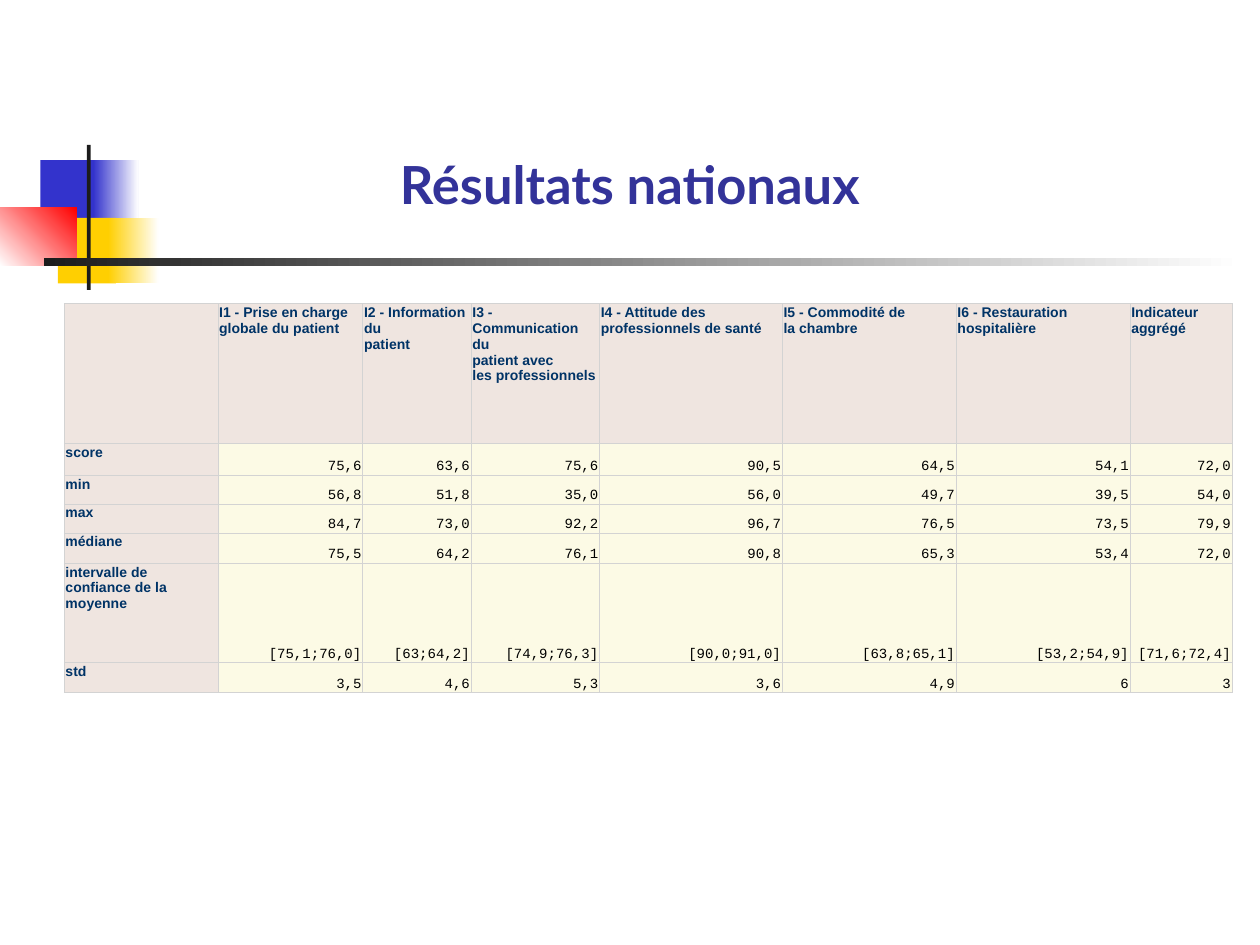
"""Build the slide of national results: a title, corner blocks and a table of scores."""
from copy import deepcopy

from lxml import etree
from pptx import Presentation
from pptx import util as u
from pptx.dml import color
from pptx.enum import shapes, text
from pptx.oxml import ns

HUES = {
    "blue": "3333CC", "gold": "FFCF01", "red": "FF0000", "dark": "1C1C1C",
    "white": "FFFFFF", "title": "333399", "head": "EFE5E0", "body": "FCFAE5",
    "navy": "003366", "black": "000000", "edge": "D3D3D3",
}


def hue(name):
    """Return the named colour."""
    return color.RGBColor.from_string(HUES[name])


def style(para, tint, form):
    """Format the runs and line breaks of a paragraph."""
    for run in para.runs:
        for key, val in form.items():
            setattr(run.font, key, val)
        run.font.color.rgb = hue(tint)
    for gap in para._p.findall(ns.qn("a:br")):
        gap.append(deepcopy(para.runs[0].font._element))


deck = Presentation()
deck.slide_width, deck.slide_height = u.Inches(10), u.Inches(7.5)
slide = deck.slides.add_slide(deck.slide_layouts[0])
sub = slide.placeholders[1]._element
sub.getparent().remove(sub)

blocks = [
    (0.32, 1.27, 0.48, 0.52, ["blue"], 0),
    (0.74, 1.27, 0.36, 0.52, ["blue", "white"], 0),
    (0.46, 1.73, 0.46, 0.52, ["gold"], 0),
    (0.86, 1.73, 0.4, 0.52, ["gold", "white"], 0),
    (0, 1.65, 0.61, 0.46, ["white", "red"], 45),
    (0.69, 1.15, 0.03, 1.15, ["dark"], 0),
    (0.35, 2.05, 9.51, 0.06, ["dark", "white"], 0),
]
group = slide.shapes.add_group_shape()
for *box, tints, angle in blocks:
    block = group.shapes.add_shape(shapes.MSO_SHAPE.RECTANGLE, *map(u.Inches, box))
    block.shadow.inherit = False
    block.line.fill.background()
    if len(tints) == 1:
        block.fill.solid()
        block.fill.fore_color.rgb = hue(tints[0])
    else:
        block.fill.gradient()
        block.fill.gradient_angle = angle
        for stop, tint in zip(block.fill.gradient_stops, tints):
            stop.color.rgb = hue(tint)

title = slide.shapes.title
place = {"left": 0.75, "top": 0.44, "width": 8.5, "height": 1.6}
for key, val in place.items():
    setattr(title, key, u.Inches(val))
frame = title.text_frame
frame.text = "Résultats nationaux"
form = {
    "vertical_anchor": text.MSO_ANCHOR.BOTTOM, "margin_bottom": u.Inches(0.33),
    "auto_size": text.MSO_AUTO_SIZE.NONE, "word_wrap": True,
}
for key, val in form.items():
    setattr(frame, key, val)
para = frame.paragraphs[0]
para.alignment = text.PP_ALIGN.CENTER
style(para, "title", {"name": "Lato", "size": u.Pt(30), "bold": True})
slide.shapes._spTree.append(title._element)

rows = [
    ["", "I1 - Prise en charge\vglobale du patient", "I2 - Information du\vpatient",
     "I3 - Communication du\vpatient avec\vles professionnels",
     "I4 - Attitude des\vprofessionnels de santé", "I5 - Commodité de\vla chambre",
     "I6 - Restauration\vhospitalière", "Indicateur\vaggrégé"],
    ["score", "75,6", "63,6", "75,6", "90,5", "64,5", "54,1", "72,0"],
    ["min", "56,8", "51,8", "35,0", "56,0", "49,7", "39,5", "54,0"],
    ["max", "84,7", "73,0", "92,2", "96,7", "76,5", "73,5", "79,9"],
    ["médiane", "75,5", "64,2", "76,1", "90,8", "65,3", "53,4", "72,0"],
    ["intervalle de confiance de la moyenne", "[75,1;76,0]", "[63;64,2]", "[74,9;76,3]",
     "[90,0;91,0]", "[63,8;65,1]", "[53,2;54,9]", "[71,6;72,4]"],
    ["std", "3,5", "4,6", "5,3", "3,6", "4,9", "6", "3"],
]
wides = [1.22, 1.15, 0.86, 1.02, 1.45, 1.38, 1.38, 0.81]
highs = [1.11, 0.25, 0.23, 0.23, 0.24, 0.79, 0.24]
area = map(u.Inches, (0.51, 2.41, 9.29, 3.07))
table = slide.shapes.add_table(len(rows), len(wides), *area).table
table.first_row = table.horz_banding = False
for col, wide in zip(table.columns, wides):
    col.width = u.Inches(wide)
for row, high in zip(table.rows, highs):
    row.height = u.Inches(high)

label = {
    "fill": "head", "tint": "navy", "anchor": text.MSO_ANCHOR.TOP,
    "align": text.PP_ALIGN.LEFT,
    "font": {"name": "Arial", "size": u.Pt(8), "bold": True},
}
score = {
    "fill": "body", "tint": "black", "anchor": text.MSO_ANCHOR.BOTTOM,
    "align": text.PP_ALIGN.RIGHT,
    "font": {"name": "Courier New", "size": u.Pt(8), "bold": False},
}
pads = {"margin_left": 0.01, "margin_right": 0.01, "margin_top": 0.01, "margin_bottom": 0}
for r, row in enumerate(rows):
    for c, word in enumerate(row):
        look = score if r and c else label
        cell = table.cell(r, c)
        cell.text_frame.text = word
        for key, val in pads.items():
            setattr(cell, key, u.Inches(val))
        cell.vertical_anchor = look["anchor"]
        para = cell.text_frame.paragraphs[0]
        para.alignment = look["align"]
        style(para, look["tint"], look["font"])
        props = cell._tc.get_or_add_tcPr()
        for side in ("lnL", "lnR", "lnT", "lnB"):
            edge = etree.SubElement(props, ns.qn(f"a:{side}"), w=str(u.Pt(0.5)))
            fill = etree.SubElement(edge, ns.qn("a:solidFill"))
            etree.SubElement(fill, ns.qn("a:srgbClr"), val=HUES["edge"])
        cell.fill.solid()
        cell.fill.fore_color.rgb = hue(look["fill"])

deck.save("out.pptx")
